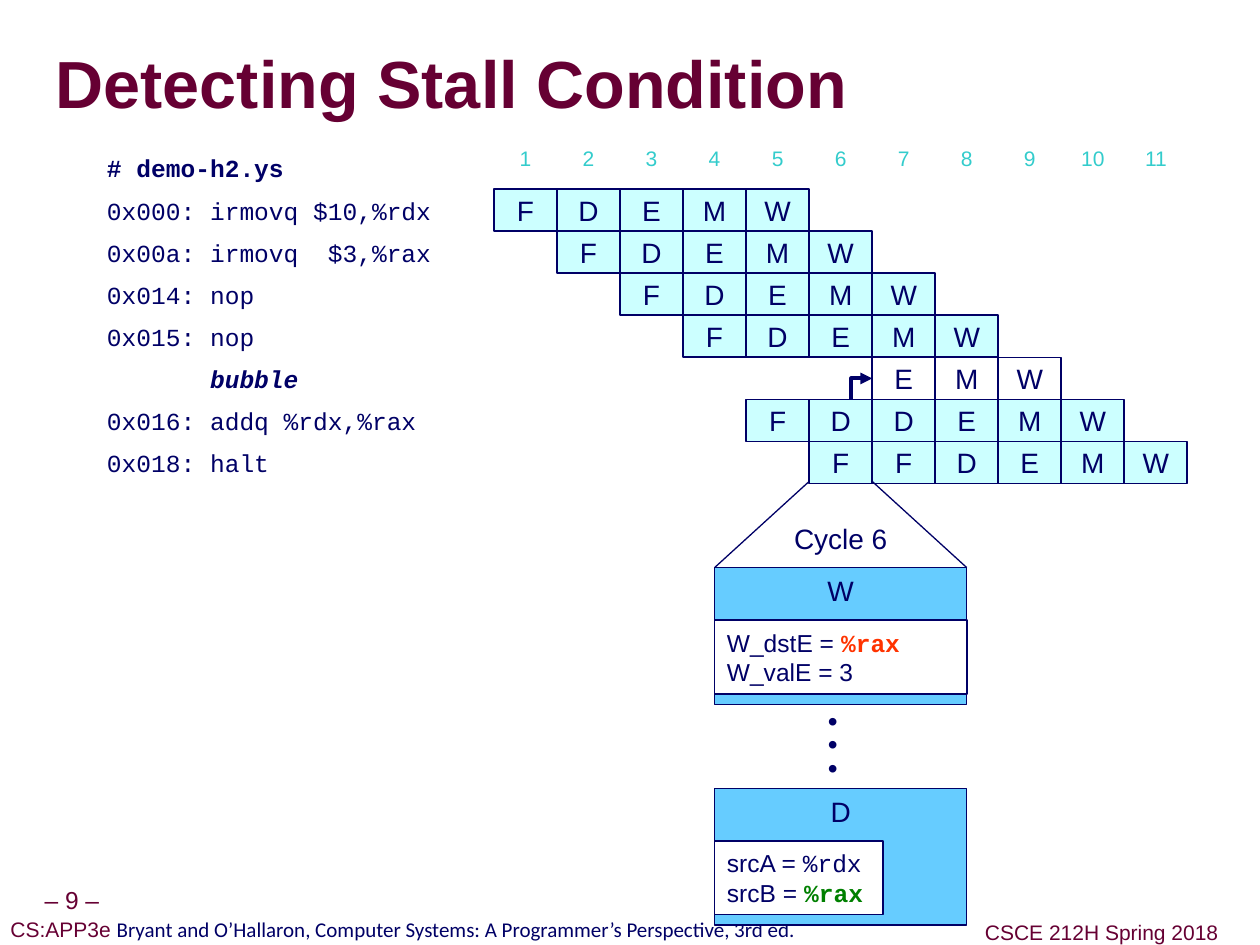
from lxml.etree import SubElement
from pptx import Presentation
from pptx.dml.color import RGBColor
from pptx.enum.shapes import MSO_CONNECTOR as CONNECTOR, MSO_SHAPE as SHAPE
from pptx.enum.text import MSO_ANCHOR as ANCHOR, MSO_AUTO_SIZE as AUTO_SIZE, PP_ALIGN as ALIGN
from pptx.oxml import parse_xml
from pptx.oxml.ns import nsdecls, qn
from pptx.util import Pt

PX = 7620  # 120 px to the inch
NAVY, MAROON, TEAL, WHITE = "000066", "660033", "33CCCC", "FFFFFF"
PALE, SKY, RED, GREEN = "CCFFFF", "66CCFF", "FF3300", "008000"
SANS, MONO = "Arial", "Courier New"
CELL_W, CELL_H = 60, 40

# Code line, first cycle, stages, cell fill
PROGRAM = [
    ("0x000: irmovq $10,%rdx", 1, "FDEMW", PALE),
    ("0x00a: irmovq  $3,%rax", 2, "FDEMW", PALE),
    ("0x014: nop", 3, "FDEMW", PALE),
    ("0x015: nop", 4, "FDEMW", PALE),
    ("       bubble", 7, "EMW", None),
    ("0x016: addq %rdx,%rax", 5, "FDDEMW", PALE),
    ("0x018: halt", 6, "FFDEMW", PALE),
]


def px(*lengths):
    return [round(length * PX) for length in lengths]


def color(value):
    return RGBColor.from_string(value)


def write(shape, lines, size=16, font=SANS, ink=NAVY, bold=False, italic=False,
          align=ALIGN.CENTER, anchor=ANCHOR.MIDDLE, spacing=None, inset=(12, 6), wrap=False):
    """Fill a shape with lines; each line is a list of (text, overrides) spans."""
    frame = shape.text_frame
    frame.auto_size = AUTO_SIZE.NONE
    frame.word_wrap = wrap
    frame.vertical_anchor = anchor
    frame.margin_left, frame.margin_top = px(*inset)
    frame.margin_right, frame.margin_bottom = px(*inset)
    for index, line in enumerate(lines):
        para = frame.paragraphs[0] if index == 0 else frame.add_paragraph()
        para.alignment = align
        if spacing:
            para.line_spacing = spacing
        for text, changes in line:
            style = dict(font=font, ink=ink, bold=bold, italic=italic) | changes
            span = para.add_run()
            span.text = text
            span.font.size = Pt(size)
            span.font.name = style["font"]
            span.font.bold = style["bold"]
            span.font.italic = style["italic"]
            span.font.color.rgb = color(style["ink"])


def add_rect(page, box, fill=None, line=None):
    rect = page.shapes.add_shape(SHAPE.RECTANGLE, *px(*box))
    rect.shadow.inherit = False
    if fill:
        rect.fill.solid()
        rect.fill.fore_color.rgb = color(fill)
    else:
        rect.fill.background()
    if line:
        rect.line.color.rgb = color(NAVY)
        rect.line.width = Pt(line)
    else:
        rect.line.fill.background()
    return rect


def add_label(page, box, lines, **style):
    write(page.shapes.add_textbox(*px(*box)), lines, **style)


def add_title(page, box, text):
    title = page.shapes.title
    title.left, title.top, title.width, title.height = px(*box)
    write(title, [[(text, {})]], size=38, ink=MAROON, bold=True, align=ALIGN.LEFT,
          spacing=0.87, inset=(0, 0), wrap=True)
    # Grey shadow behind the letters
    shadow = parse_xml(
        f'<a:effectLst {nsdecls("a")}><a:outerShdw dist="53882" dir="2700000" algn="ctr" rotWithShape="0">'
        '<a:srgbClr val="969696"/></a:outerShdw></a:effectLst>')
    title.text_frame.paragraphs[0].runs[0].font.fill  # fill already set by write
    letters = title.text_frame.paragraphs[0].runs[0].font._element
    letters.find(qn("a:solidFill")).addnext(shadow)


def add_footer(page, box):
    left, top, width, height = box
    style = dict(ink=MAROON, spacing=0.9, inset=(6, 6))
    add_label(page, (left + 29, top, 79, 37), [[("– 9 –", {})]], size=14, **style)
    book = "Bryant and O’Hallaron, Computer Systems: A Programmer’s Perspective, 3rd ed."
    add_label(page, (left, top + 30, 767, 33),
              [[("CS:APP3e ", {}), (book, dict(font="Calibri", ink=NAVY))]], size=12, **style)
    add_label(page, (left + width - 268, top + 33, 235, 33),
              [[("CSCE 212H Spring 2018", {})]], size=12, **style)


def add_code(page, box):
    left, top, width, height = box
    heading = [("# demo-h2.ys", dict(bold=True))]
    lines = [heading] + [[(code, dict(bold=True, italic=True) if "bubble" in code else {})]
                         for code, *_ in PROGRAM]
    for row, line in enumerate(lines):
        rect = add_rect(page, (left, top + row * CELL_H, width, CELL_H), WHITE)
        write(rect, [line], size=14, font=MONO, align=ALIGN.LEFT)


def add_pipeline(page, box):
    left, top, width, height = box
    # Cycle numbers
    for cycle in range(width // CELL_W):
        rect = add_rect(page, (left + cycle * CELL_W, top, CELL_W, CELL_H), WHITE)
        write(rect, [[(str(cycle + 1), {})]], size=12, ink=TEAL)
    # Stages of each instruction
    first_row = top + 50
    for row, (_, start, stages, fill) in enumerate(PROGRAM):
        for cycle, stage in enumerate(stages, start - 1):
            cell = (left + cycle * CELL_W, first_row + row * CELL_H, CELL_W, CELL_H)
            write(add_rect(page, cell, fill, 1), [[(stage, {})]])
    # Elbow arrow from the stalled decode stage to the bubble
    bubble_x, bubble_y = left + 6 * CELL_W, first_row + 4.5 * CELL_H
    builder = page.shapes.build_freeform(*px(bubble_x - 20, bubble_y + 20))
    builder.add_line_segments([px(bubble_x - 20, bubble_y), px(bubble_x, bubble_y)], close=False)
    arrow = builder.convert_to_shape()
    arrow.shadow.inherit = False
    arrow.fill.background()
    arrow.line.color.rgb = color(NAVY)
    arrow.line.width = Pt(2.25)
    SubElement(arrow.line._get_or_add_ln(), qn("a:tailEnd"), type="triangle")


def add_zoom_line(page, start, end):
    line = page.shapes.add_connector(CONNECTOR.STRAIGHT, *px(*start, *end))
    line.line.color.rgb = color(NAVY)
    line.line.width = Pt(0.75)
    SubElement(line._element.spPr, qn("a:effectLst"))


def add_stage_panel(page, box, stage, signal_width, signals):
    left, top, width, height = box
    write(add_rect(page, box, SKY, 0.75), [[(stage, {})]], anchor=ANCHOR.TOP)
    values = add_rect(page, (left, top + 50, signal_width, 70), WHITE, 1)
    write(values, signals, size=14, align=ALIGN.LEFT)


def add_cycle_detail(page, box):
    left, top, width, height = box
    middle = left + width / 2
    for side in (-1, 1):
        add_zoom_line(page, (middle + side * CELL_W / 2, top),
                      (middle + side * width / 2, top + 82))
    add_label(page, (left, top + 32, width, 44), [[("Cycle 6", {})]], anchor=ANCHOR.TOP, wrap=True)
    add_stage_panel(page, (left, top + 82, width, 130), "W", width, [
        [("W_dstE = ", {}), ("%rax", dict(font=MONO, ink=RED, bold=True))],
        [("W_valE = 3", {})]])
    add_label(page, (left + 96, top + 214, 34, 79), [[("•", {})]] * 3,
              align=ALIGN.LEFT, anchor=ANCHOR.TOP, spacing=0.7)
    add_stage_panel(page, (left, top + 292, width, 130), "D", 160, [
        [("srcA = ", {}), ("%rdx", dict(font=MONO))],
        [("srcB = ", {}), ("%rax", dict(font=MONO, ink=GREEN, bold=True))]])


def main():
    deck = Presentation()
    deck.slide_width, deck.slide_height = px(1199, 899)
    page = deck.slides.add_slide(deck.slide_layouts[5])
    add_footer(page, (0, 839, 1199, 60))
    add_title(page, (53, 32, 1142, 102), "Detecting Stall Condition")
    add_code(page, (90, 140, 340, 320))
    add_pipeline(page, (470, 130, 660, 330))
    add_cycle_detail(page, (680, 458, 240, 422))
    deck.save("out.pptx")


if __name__ == "__main__":
    main()
